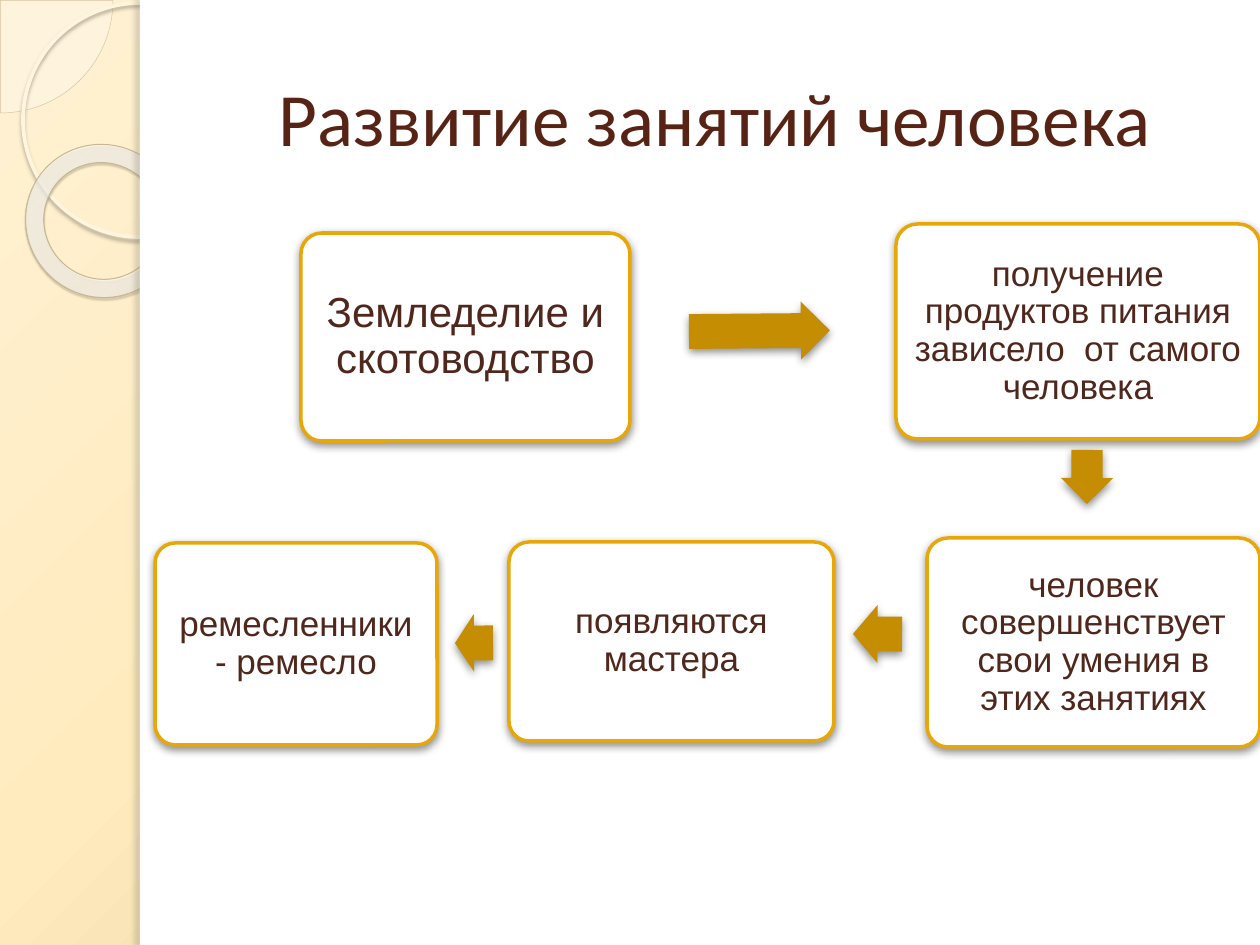
"""Build the slide on how human occupations developed, as a chain of boxes."""
from lxml import etree
from pptx import Presentation
from pptx.dml.color import RGBColor
from pptx.enum.shapes import MSO_SHAPE
from pptx.enum.text import MSO_ANCHOR, PP_ALIGN
from pptx.oxml.ns import qn
from pptx.util import Emu, Pt

PIE, OVAL, DONUT = MSO_SHAPE.PIE, MSO_SHAPE.OVAL, MSO_SHAPE.DONUT
RECT, ROUNDED, ARROW = MSO_SHAPE.RECTANGLE, MSO_SHAPE.ROUNDED_RECTANGLE, MSO_SHAPE.RIGHT_ARROW
MIDDLE, CENTER = MSO_ANCHOR.MIDDLE, PP_ALIGN.CENTER

WHITE = RGBColor(0xFF, 0xFF, 0xFF)
BLACK = RGBColor(0, 0, 0)
GOLD = RGBColor(0xE7, 0xA7, 0x09)
DARK_GOLD = RGBColor(0xC5, 0x8D, 0x01)
TITLE_BROWN = RGBColor(0x57, 0x23, 0x14)
TEXT_BROWN = RGBColor(0x4F, 0x27, 0x1C)
CREAM = RGBColor(0xFE, 0xFA, 0xF4)
PALE_CREAM = RGBColor(0xFF, 0xF5, 0xDE)
SAND = RGBColor(0xD3, 0xC3, 0x9F)
DARK_SAND = RGBColor(0xC7, 0xB8, 0x93)
RING_SHADE = RGBColor(0xB0, 0xA6, 0x8F)
DONUT_SHADE = RGBColor(0x5A, 0x54, 0x44)
EDGE_SHADE = RGBColor(0x73, 0x6F, 0x63)
BACKGROUND_STOPS = [(0, RGBColor(0xFF, 0xF1, 0xD3), 100),
                    (40, RGBColor(0xFF, 0xEB, 0xBE), 100),
                    (100, RGBColor(0xC9, 0xB4, 0x84), 100)]
DONUT_STOPS = [(0, RGBColor(0xFF, 0xFC, 0xF6), 70),
               (70, RGBColor(0xFF, 0xFE, 0xFB), 55),
               (100, RGBColor(0xF0, 0xD2, 0x8E), 60)]

SLIDE_SIZE = (1260, 945)
TITLE = "Развитие занятий человека"
TITLE_AREA = (198, 38, 1033, 157)
STEPS = [
    ("Земледелие и скотоводство", (301, 233, 329, 208), 24, 13),
    ("получение продуктов питания зависело  от самого человека", (896, 224, 364, 215), 20, 10),
    ("человек совершенствует свои умения в этих занятиях", (927, 538, 333, 209), 20, 10),
    ("появляются мастера", (509, 542, 325, 199), 20, 10),
    ("ремесленники - ремесло", (155, 543, 282, 202), 20, 10),
]
ARROWS = [
    ((689, 302, 141, 58), 359.5),
    ((1061, 450, 52, 54), 90.1),
    ((853, 605, 49, 58), 180.2),
    ((455, 614, 38, 58), 179.5),
]
STEP_SHADOW = (BLACK, 43, 5, 2, 90)
DECOR = [
    (PIE, (-112, -112, 225, 225), dict(fill=CREAM, alpha=33, line=(SAND, 0.25), adjust=(0, 54))),
    (OVAL, (23, 3, 234, 234), dict(line=(PALE_CREAM, 2.15), shadow=(RING_SHADE, 85, 2, 2, 90))),
    (DONUT, (25, 145, 155, 152), dict(
        stops=DONUT_STOPS, focus=(-408, -50, 508, 150), line=(DARK_SAND, 0.58),
        shadow=(DONUT_SHADE, 35, 1, 1.2, 75), adjust=(0.12,), turn=38.6)),
    (RECT, (140, 0, 1120, 945), dict(fill=WHITE)),
    (RECT, (140, 0, 10, 945), dict(fill=WHITE, shadow=(EDGE_SHADE, 25, 3, 3, 180))),
]


def px(length):
    return Emu(round(length * 914400 / 126))


def add_child(parent, tag, **values):
    return etree.SubElement(parent, qn(tag), {key: str(value) for key, value in values.items()})


def add_color(parent, color, alpha):
    add_child(add_child(parent, "a:srgbClr", val=color), "a:alpha", val=alpha * 1000)


def set_radial(holder, fill, stops, focus):
    fill.solid()
    fill.fore_color.rgb = WHITE
    solid = holder.find(".//" + qn("a:solidFill"))
    gradient = etree.Element(qn("a:gradFill"), rotWithShape="1")
    stop_list = add_child(gradient, "a:gsLst")
    for position, color, alpha in stops:
        add_color(add_child(stop_list, "a:gs", pos=position * 1000), color, alpha)
    circle = add_child(gradient, "a:path", path="circle")
    add_child(circle, "a:fillToRect", **{side: value * 1000 for side, value in zip("ltrb", focus)})
    solid.getparent().replace(solid, gradient)


def add_figure(slide, preset, area, fill=None, alpha=100, stops=None, focus=None,
               line=None, shadow=None, adjust=(), turn=0):
    figure = slide.shapes.add_shape(preset, *map(px, area))
    figure.rotation = turn
    for index, value in enumerate(adjust):
        figure.adjustments[index] = value
    properties = figure._element.spPr
    if stops:
        set_radial(properties, figure.fill, stops, focus)
    elif fill is not None:
        figure.fill.solid()
        figure.fill.fore_color.rgb = fill
        if alpha < 100:
            add_child(properties.find(".//" + qn("a:srgbClr")), "a:alpha", val=alpha * 1000)
    else:
        figure.fill.background()
    if line:
        figure.line.color.rgb, figure.line.width = line[0], Pt(line[1])
    else:
        figure.line.fill.background()
    figure.shadow.inherit = False
    if shadow:
        color, opacity, blur, distance, angle = shadow
        outer = add_child(properties.find(qn("a:effectLst")), "a:outerShdw", blurRad=Pt(blur),
                          dist=Pt(distance), dir=angle * 60000, algn="ctr", rotWithShape=0)
        add_color(outer, color, opacity)
    return figure


def write(frame, text, font, color, spacing=1.0, inset=None):
    frame.text = text
    frame.word_wrap = True
    frame.vertical_anchor = MIDDLE
    if inset is not None:
        for side in ("left", "top", "right", "bottom"):
            setattr(frame, f"margin_{side}", px(inset))
    paragraph = frame.paragraphs[0]
    paragraph.alignment = CENTER
    paragraph.line_spacing = spacing
    for name, value in font.items():
        setattr(paragraph.runs[0].font, name, value)
    paragraph.runs[0].font.color.rgb = color


def main():
    deck = Presentation()
    deck.slide_width, deck.slide_height = map(px, SLIDE_SIZE)
    slide = deck.slides.add_slide(deck.slide_layouts[5])
    set_radial(slide.background._cSld, slide.background.fill, BACKGROUND_STOPS,
               (-24, -20, 124, 120))
    for preset, area, look in DECOR:
        add_figure(slide, preset, area, **look)

    title = slide.shapes.title
    title.left, title.top, title.width, title.height = map(px, TITLE_AREA)
    write(title.text_frame, TITLE, dict(size=Pt(43), name="Calibri"), TITLE_BROWN)
    title._element.getparent().append(title._element)

    for text, area, size, inset in STEPS:
        step = add_figure(slide, ROUNDED, area, fill=WHITE, line=(GOLD, 2),
                          shadow=STEP_SHADOW, adjust=(0.1,))
        write(step.text_frame, text, dict(size=Pt(size), name="Arial"), TEXT_BROWN, 0.9, inset)
    for area, turn in ARROWS:
        if turn == 90.1:
            left, top, width, height = area
            area = (left + (width - height) / 2, top + (height - width) / 2, height, width)
        add_figure(slide, ARROW, area, fill=DARK_GOLD, shadow=STEP_SHADOW,
                   adjust=(0.6, 0.5), turn=turn)
    deck.save("out.pptx")


if __name__ == "__main__":
    main()
